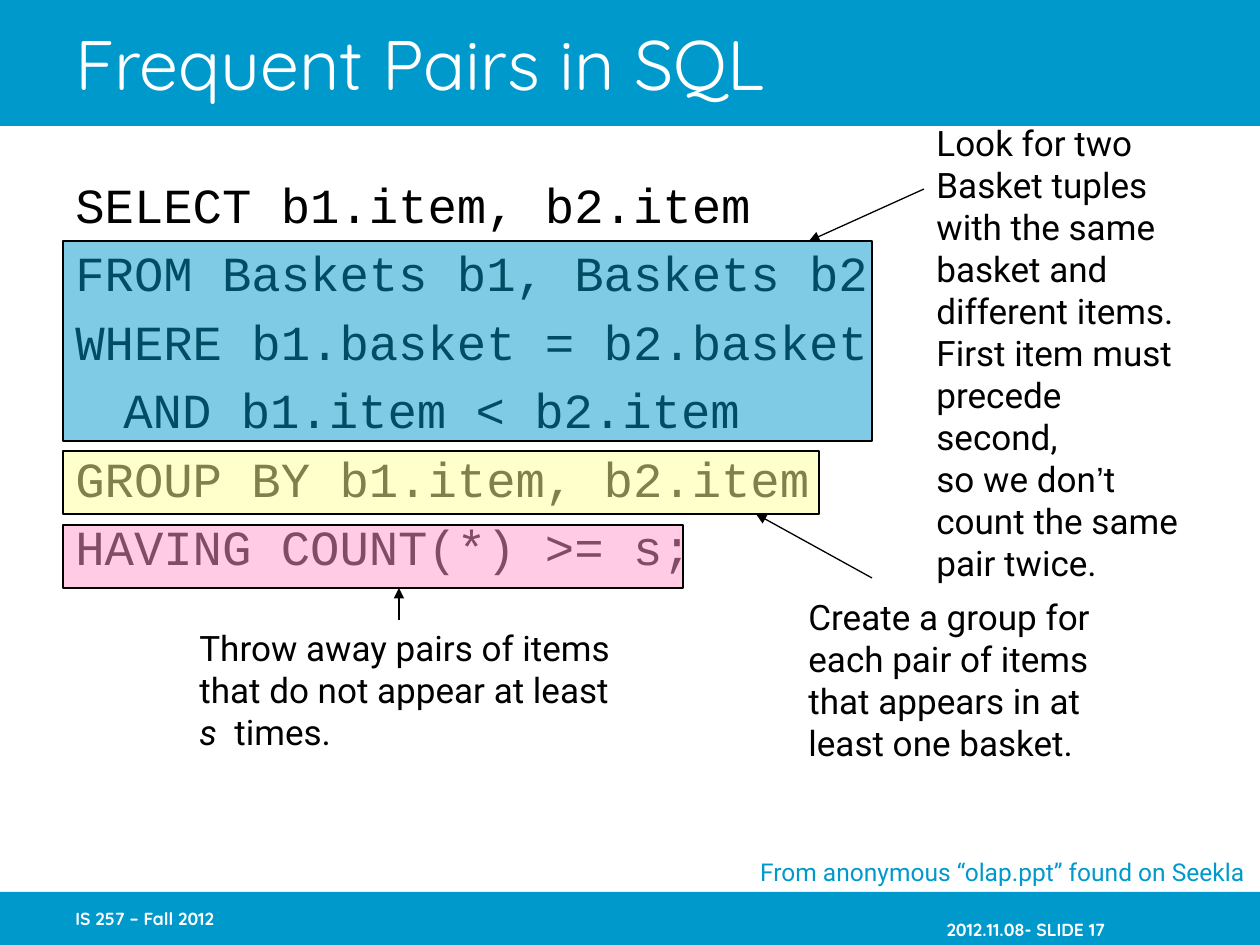
from lxml import etree
from pptx import Presentation
from pptx.dml.color import RGBColor
from pptx.enum.shapes import MSO_CONNECTOR, MSO_SHAPE
from pptx.enum.text import MSO_ANCHOR, PP_ALIGN
from pptx.oxml.ns import qn
from pptx.util import Emu, Pt

RECT = MSO_SHAPE.RECTANGLE
LINE = MSO_CONNECTOR.STRAIGHT
TOP, MIDDLE = MSO_ANCHOR.TOP, MSO_ANCHOR.MIDDLE
LEFT, CENTER, RIGHT = PP_ALIGN.LEFT, PP_ALIGN.CENTER, PP_ALIGN.RIGHT

SCALE = 914400 / 126
BLUE, WHITE, BLACK = "0099CC", "FFFFFF", "000000"
HEAD, NOTE, CODE = "Quicksand", "Roboto", "Courier New"

QUERY = [
    "SELECT b1.item, b2.item",
    "FROM Baskets b1, Baskets b2",
    "WHERE b1.basket = b2.basket",
    "AND b1.item < b2.item",
    "GROUP BY b1.item, b2.item",
    "HAVING COUNT(*) >= s;",
]
PAIRS = [
    "Look for two", "Basket tuples", "with the same", "basket and",
    "different items.", "First item must", "precede second,",
    ["so we don", "’", "t"], "count the same", "pair twice.",
]
GROUPS = ["Create a group for", "each pair of items",
          "that appears in at", "least one basket."]
DROPS = ["Throw away pairs of items", "that do not appear at least",
         ["s", "  times."]]


def px(n):
    return Emu(round(n * SCALE))


def color(code):
    return RGBColor.from_string(code)


def add_box(slide, at, fill, line=None, alpha=None):
    box = slide.shapes.add_shape(RECT, *map(px, at))
    box.shadow.inherit = False
    box.fill.solid()
    box.fill.fore_color.rgb = color(fill)
    if alpha:
        tint = box.fill._xPr.find(".//" + qn("a:srgbClr"))
        etree.SubElement(tint, qn("a:alpha"), val=str(alpha * 1000))
    if line:
        box.line.color.rgb = color(line)
        box.line.width = Pt(0.75)
    else:
        box.line.fill.background()


def add_text(slide, at, lines, face, size, ink=BLACK, bold=False,
             align=LEFT, anchor=TOP, wrap=True, gap=0):
    """Write one paragraph a line; a line given as a list holds runs."""
    frame = slide.shapes.add_textbox(*map(px, at)).text_frame
    frame.word_wrap = wrap
    frame.vertical_anchor = anchor
    for i, line in enumerate(lines):
        para = frame.paragraphs[0] if i == 0 else frame.add_paragraph()
        for part in [line] if isinstance(line, str) else line:
            para.add_run().text = part
        para.alignment = align
        if i and gap:
            para.space_before = Pt(gap)
        font = para.font
        font.name, font.size, font.bold = face, Pt(size), bold
        font.color.rgb = color(ink)
    return frame


def add_arrow(slide, start, end):
    arrow = slide.shapes.add_connector(LINE, *map(px, start + end))
    arrow.line.color.rgb = color(BLACK)
    arrow.line.width = Pt(0.75)
    etree.SubElement(arrow.line._get_or_add_ln(), qn("a:tailEnd"),
                     type="triangle")
    etree.SubElement(arrow._element.spPr, qn("a:effectLst"))


def main():
    prs = Presentation()
    prs.slide_width, prs.slide_height = px(1260), px(945)
    slide = prs.slides.add_slide(prs.slide_layouts[6])

    # Title band and footer
    add_box(slide, (0, 0, 1260, 126), BLUE)
    add_box(slide, (0, 892, 1260, 53), BLUE)
    add_text(slide, (63, 0, 1071, 126), ["Frequent Pairs in SQL"],
             HEAD, 40, WHITE, anchor=MIDDLE)
    add_text(slide, (63, 892, 262, 53), ["IS 257 – Fall 2012"],
             HEAD, 10, WHITE, bold=True, anchor=MIDDLE)
    page = add_text(slide, (905, 907, 200, 44), ["2012.11.08- SLIDE 17"],
                    HEAD, 10, WHITE, bold=True, align=RIGHT, anchor=MIDDLE)
    page.margin_right = 0

    # Query, with its AND clause indented
    query = add_text(slide, (63, 168, 1134, 683), QUERY, CODE, 28, gap=5.5)
    query.paragraphs[3]._p.get_or_add_pPr().set("marL", str(px(48)))

    # Tinted clauses
    for top, wide, high, fill in [(241, 809, 200, BLUE),
                                  (451, 756, 63, "FFFF99"),
                                  (525, 620, 63, "FF99CC")]:
        add_box(slide, (63, top, wide, high), fill, BLACK, alpha=50)

    # Notes and their arrows
    pairs = add_text(slide, (924, 115, 272, 474), PAIRS, NOTE, 20)
    pairs.paragraphs[7].runs[1].font.name = "Arial"
    add_text(slide, (796, 589, 310, 180), GROUPS, NOTE, 20)
    drops = add_text(slide, (187, 620, 438, 139), DROPS, NOTE, 20)
    drops.paragraphs[2].runs[0].font.italic = True
    for start, end in [((924, 189), (809, 241)),
                       ((872, 578), (756, 514)),
                       ((399, 620), (399, 588))]:
        add_arrow(slide, start, end)

    # Source line
    add_text(slide, (745, 851, 515, 42),
             ["From anonymous “olap.ppt” found on Seekla"],
             NOTE, 14, BLUE, align=CENTER, wrap=False)

    prs.save("out.pptx")


if __name__ == "__main__":
    main()
